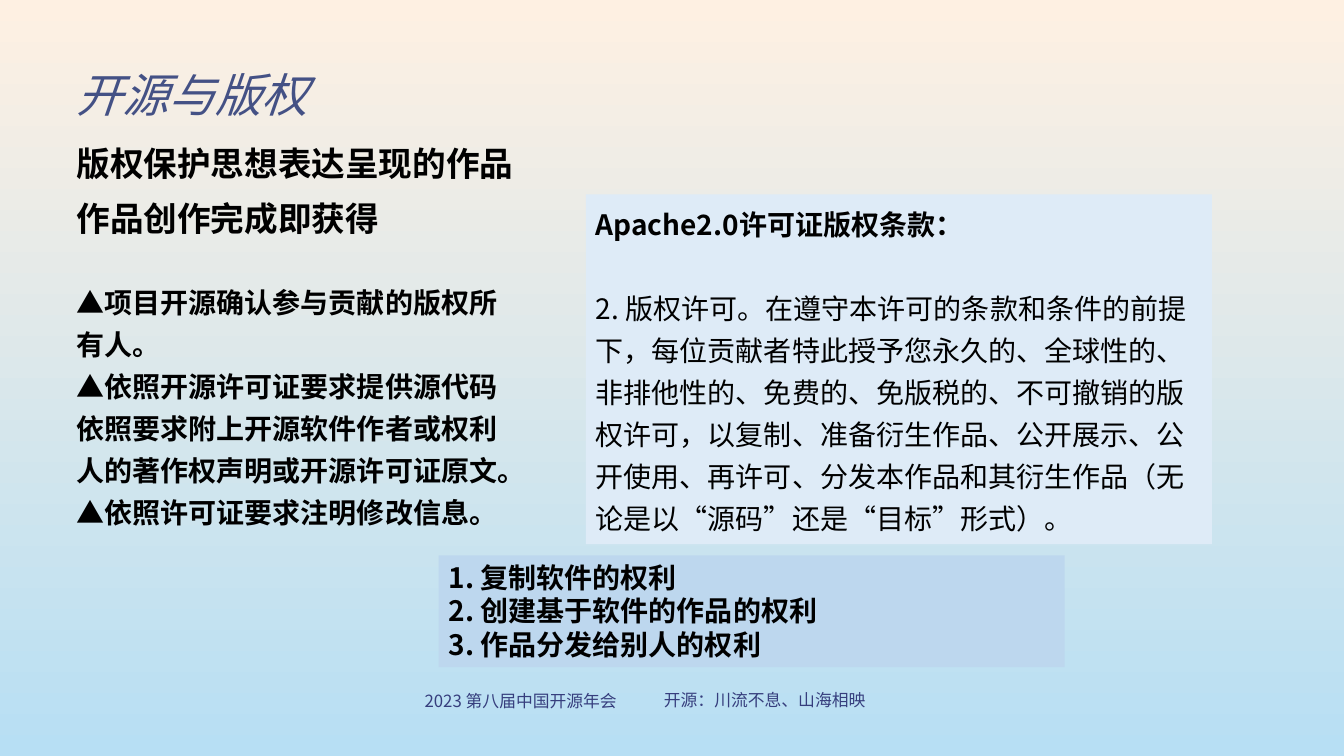
from dataclasses import dataclass

from lxml.etree import SubElement as SubEl
from pptx import Presentation
from pptx.dml.color import RGBColor as Rgb
from pptx.enum.shapes import MSO_SHAPE as Form
from pptx.enum.text import MSO_ANCHOR as Anchor, PP_ALIGN as Align
from pptx.oxml.ns import qn
from pptx.slide import Slide
from pptx.util import Inches, Pt


@dataclass(frozen=True)
class Theme:
    face: str = "Noto Sans CJK SC"
    sky: tuple[str, str] = ("FEF0E2", "B7DFF4")
    ink: str = "000000"
    title: str = "445185"
    foot: str = "363E7D"
    pale: str = "DEEBF7"
    blue: str = "BDD7EE"
    big: int = 33
    lead: int = 24
    body: int = 20
    small: int = 12


@dataclass(frozen=True)
class Line:
    text: str
    bold: bool = True
    gap: int = 0


@dataclass(frozen=True)
class Box:
    left: float
    top: float
    width: float
    height: float
    lines: tuple[Line, ...]
    size: int
    color: str = Theme.ink
    fill: str = ""
    space: float = 1.0
    italic: bool = False
    align: Align = Align.LEFT
    anchor: Anchor = Anchor.TOP


THEME = Theme()
EDGE = 0.66  # shared left edge of the text column

BOXES = (
    # Footer
    Box(3.79, 6.8, 2.75, 0.3, (Line("2023 第八届中国开源年会", False),),
        THEME.small, THEME.foot, align=Align.CENTER),
    Box(6.38, 6.79, 2.41, 0.3, (Line("开源：川流不息、山海相映", False),),
        THEME.small, THEME.foot, align=Align.CENTER),
    # Title and lead lines
    Box(EDGE, 0.43, 4.61, 1.07, (Line("开源与版权", False),),
        THEME.big, THEME.title, space=0.9, italic=True, anchor=Anchor.MIDDLE),
    Box(EDGE, 1.37, 4.9, 0.5, (Line("版权保护思想表达呈现的作品"),), THEME.lead),
    Box(EDGE, 1.91, 4.44, 0.5, (Line("作品创作完成即获得"),), THEME.lead),
    # Duties
    Box(EDGE, 2.7, 4.61, 2.53, (
        Line("▲项目开源确认参与贡献的版权所有人。"),
        Line("▲依照开源许可证要求提供源代码依照要求附上开源软件作者或权利人的"
             "著作权声明或开源许可证原文。"),
        Line("▲依照许可证要求注明修改信息。"),
    ), THEME.body, space=1.25),
    # Licence clause
    Box(5.81, 1.93, 6.21, 3.47, (
        Line("Apache2.0许可证版权条款："),
        Line("2. 版权许可。在遵守本许可的条款和条件的前提下，每位贡献者特此授予您"
             "永久的、全球性的、非排他性的、免费的、免版税的、不可撤销的版权许可，"
             "以复制、准备衍生作品、公开展示、公开使用、再许可、分发本作品和其衍生"
             "作品（无论是以“源码”还是“目标”形式）。", False, 30),
    ), THEME.body, fill=THEME.pale, space=1.25),
    # Rights
    Box(4.35, 5.51, 6.21, 1.11, (
        Line("1. 复制软件的权利"),
        Line("2. 创建基于软件的作品的权利"),
        Line("3. 作品分发给别人的权利"),
    ), THEME.body, fill=THEME.blue),
)


def apply(item: object, style: dict[str, object]) -> None:
    for key, value in style.items():
        setattr(item, key, value)


def paint(slide: Slide) -> None:
    fill = slide.background.fill
    fill.gradient()
    fill.gradient_angle = 270
    for stop, color in zip(fill.gradient_stops, THEME.sky):
        stop.color.rgb = Rgb.from_string(color)


def draw(slide: Slide, box: Box) -> None:
    area = [Inches(n) for n in (box.left, box.top, box.width, box.height)]
    if box.fill:
        shape = slide.shapes.add_shape(Form.RECTANGLE, *area)
        shape.shadow.inherit = False
        shape.fill.solid()
        shape.fill.fore_color.rgb = Rgb.from_string(box.fill)
        shape.line.fill.background()
    else:
        shape = slide.shapes.add_textbox(*area)
    frame = shape.text_frame
    apply(frame, {"word_wrap": True, "vertical_anchor": box.anchor})

    for i, line in enumerate(box.lines):
        para = frame.add_paragraph() if i else frame.paragraphs[0]
        apply(para, {"alignment": box.align, "line_spacing": box.space,
                     "space_before": Pt(line.gap)})
        run = para.add_run()
        run.text = line.text
        apply(run.font, {"name": THEME.face, "size": Pt(box.size),
                         "bold": line.bold, "italic": box.italic})
        run.font.color.rgb = Rgb.from_string(box.color)
        # East Asian glyphs need their own typeface entry
        SubEl(run.font._element, qn("a:ea"), typeface=THEME.face)


def main() -> None:
    deck = Presentation()
    apply(deck, {"slide_width": Inches(13.33), "slide_height": Inches(7.5)})
    slide = deck.slides.add_slide(deck.slide_layouts[6])
    paint(slide)
    for box in BOXES:
        draw(slide, box)
    deck.save("out.pptx")


if __name__ == "__main__":
    main()
